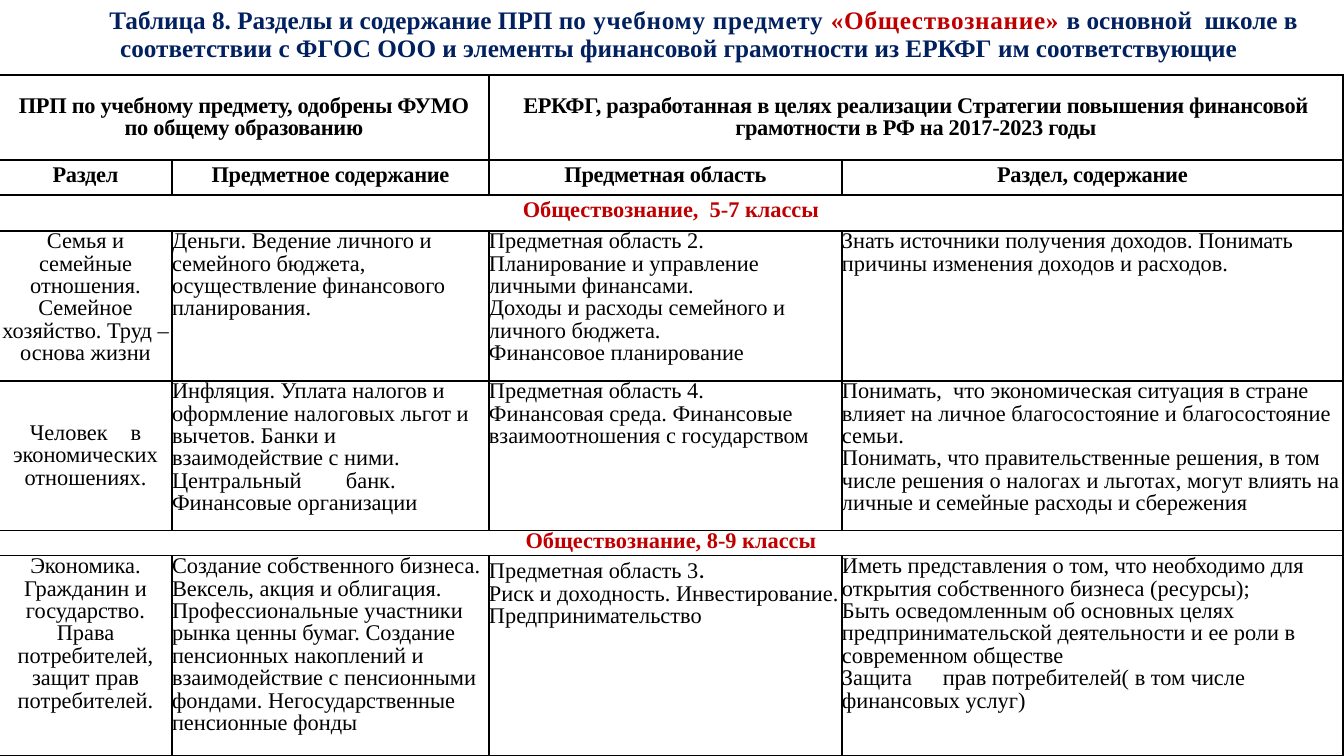
import lxml.etree
import pptx
import pptx.dml.color
import pptx.enum.text
import pptx.oxml.ns
import pptx.util

PX = 9071  # EMU in one px, 100.8 px to the inch
SERIF = "Times New Roman"
BLACK, RED, NAVY = "000000", "C00000", "002060"
CENTER = pptx.enum.text.PP_ALIGN.CENTER
LEFT = pptx.enum.text.PP_ALIGN.LEFT
TOP = pptx.enum.text.MSO_ANCHOR.TOP
MIDDLE = pptx.enum.text.MSO_ANCHOR.MIDDLE

COLUMNS = [173, 317, 353, 501]
ROWS = [85, 35, 36, 150, 150, 25, 200]

TITLE = [  # text, colour, letter spacing in points
    ("Таблица 8. Разделы и содержание ПРП по", NAVY, 0),
    (" учебному предмету ", NAVY, 0.5),
    ("«Обществознание» ", RED, 0.5),
    ("в основной  школе в соответствии с ФГОС ООО и элементы финансовой "
     "грамотности из ЕРКФГ им соответствующие", NAVY, 0),
]
SOURCES = [
    "ПРП по учебному предмету, одобрены ФУМО по общему образованию",
    "ЕРКФГ, разработанная в целях реализации Стратегии повышения финансовой "
    "грамотности в РФ на 2017-2023 годы",
]
HEADINGS = ["Раздел", "Предметное содержание", "Предметная область", "Раздел, содержание"]
GRADES = {2: "Обществознание,  5-7 классы", 5: "Обществознание, 8-9 классы"}
TOPICS = {
    3: [
        "Семья и семейные отношения. Семейное хозяйство. Труд – основа жизни",
        "Деньги. Ведение личного и семейного бюджета, осуществление финансового "
        "планирования.",
        "Предметная область 2. Планирование и управление личными финансами.\n"
        "Доходы и расходы семейного и личного бюджета.\n"
        "Финансовое планирование",
        "Знать источники получения доходов. Понимать причины изменения доходов и расходов.",
    ],
    4: [
        "Человек\tв экономических отношениях.",
        "Инфляция. Уплата налогов и оформление налоговых льгот и вычетов. Банки и "
        "взаимодействие с ними.\n"
        "Центральный\tбанк.\n"
        "Финансовые организации",
        "Предметная область 4.\n"
        "Финансовая среда. Финансовые взаимоотношения с государством",
        "Понимать,  что экономическая ситуация в стране влияет на личное "
        "благосостояние и благосостояние семьи.\n"
        "Понимать, что правительственные решения, в том числе решения о налогах и "
        "льготах, могут влиять на личные и семейные расходы и сбережения",
    ],
    6: [
        "Экономика. Гражданин и государство.\n"
        "Права потребителей, защит прав потребителей.",
        "Создание собственного бизнеса. Вексель, акция и облигация. Профессиональные "
        "участники рынка ценны бумаг. Создание пенсионных накоплений и взаимодействие "
        "с пенсионными фондами. Негосударственные пенсионные фонды",
        "Предметная область 3\n"
        "Риск и доходность. Инвестирование. Предпринимательство",
        "Иметь представления о том, что необходимо для открытия собственного бизнеса "
        "(ресурсы);\n"
        "Быть осведомленным об основных целях предпринимательской деятельности и ее "
        "роли в современном обществе\n"
        "Защита\tправ потребителей( в том числе финансовых услуг)",
    ],
}


def px(length):
    return pptx.util.Emu(length * PX)


def rgb(color):
    return pptx.dml.color.RGBColor.from_string(color)


def add_xml(parent, tag, **attributes):
    return lxml.etree.SubElement(parent, pptx.oxml.ns.qn(tag), attributes)


def style_run(run, color=BLACK, bold=False, size=16, font=SERIF, spacing=0):
    run.font.name = font
    run.font.size = pptx.util.Pt(size)
    run.font.bold = bold
    run.font.color.rgb = rgb(color)
    run._r.get_or_add_rPr().set("spc", str(round(spacing * 100)))


def draw_borders(cell):
    properties = cell._tc.get_or_add_tcPr()
    for position, side in enumerate(("a:lnL", "a:lnR", "a:lnT", "a:lnB")):
        border = add_xml(properties, side, w="12700")
        fill = add_xml(border, "a:solidFill")
        add_xml(fill, "a:srgbClr", val=BLACK)
        properties.insert(position, border)


def fill_cell(cell, text, align=CENTER, anchor=TOP, flush=True, **style):
    cell.vertical_anchor = anchor
    if flush:
        cell.margin_left = cell.margin_right = cell.margin_top = cell.margin_bottom = 0
    cell.text_frame.text = text
    for paragraph in cell.text_frame.paragraphs:
        paragraph.alignment = align
        paragraph.line_spacing = 0.9
        for run in paragraph.runs:
            style_run(run, **style)


def set_title(slide, left, top, width, height):
    title = slide.shapes.title
    title.left, title.top, title.width, title.height = map(px, (left, top, width, height))
    frame = title.text_frame
    frame.word_wrap = True
    frame.auto_size = pptx.enum.text.MSO_AUTO_SIZE.NONE
    frame.vertical_anchor = TOP
    paragraph = frame.paragraphs[0]
    paragraph.alignment = CENTER
    paragraph.line_spacing = 0.9
    indents = paragraph._p.get_or_add_pPr()
    indents.set("marL", str(px(7)))
    indents.set("indent", str(px(49)))
    for text, color, spacing in TITLE:
        run = paragraph.add_run()
        run.text = text
        style_run(run, color, True, 18, spacing=spacing)


def add_curriculum(slide, left, top):
    frame = slide.shapes.add_table(len(ROWS), len(COLUMNS), px(left), px(top),
                                   px(sum(COLUMNS)), px(sum(ROWS)))
    curriculum = frame.table
    curriculum.first_row = curriculum.horz_banding = False
    for column, width in zip(curriculum.columns, COLUMNS):
        column.width = px(width)
    for row, height in zip(curriculum.rows, ROWS):
        row.height = px(height)
    for cell in curriculum.iter_cells():
        cell.fill.background()
        draw_borders(cell)

    # Headings
    for index, source in enumerate(SOURCES):
        cell = curriculum.cell(0, 2 * index)
        cell.merge(curriculum.cell(0, 2 * index + 1))
        fill_cell(cell, source, anchor=MIDDLE, flush=False, bold=True, spacing=-0.2)
    for index, heading in enumerate(HEADINGS):
        fill_cell(curriculum.cell(1, index), heading, flush=False, bold=True, spacing=-0.2)

    # Grade bands
    for row, grades in GRADES.items():
        cell = curriculum.cell(row, 0)
        cell.merge(curriculum.cell(row, len(COLUMNS) - 1))
        fill_cell(cell, grades, flush=row == 5, color=RED, bold=True)

    # Topics
    for row, texts in TOPICS.items():
        for index, text in enumerate(texts):
            fill_cell(curriculum.cell(row, index), text,
                      align=LEFT if index else CENTER,
                      anchor=MIDDLE if (row, index) == (4, 0) else TOP)

    # Wide gap in the bank line, larger full stop after the third area
    bank = curriculum.cell(4, 1).text_frame.paragraphs[1]
    tabs = add_xml(bank._p.get_or_add_pPr(), "a:tabLst")
    add_xml(tabs, "a:tab", pos=str(px(174)), algn="l")
    full_stop = curriculum.cell(6, 2).text_frame.paragraphs[0].add_run()
    full_stop.text = "."
    style_run(full_stop, size=18, font="Calibri")


def main():
    presentation = pptx.Presentation()
    presentation.slide_width = px(1344)
    presentation.slide_height = px(756)
    slide = presentation.slides.add_slide(presentation.slide_layouts[5])
    set_title(slide, 6, 3, 1339, 66)
    add_curriculum(slide, -1, 75)
    presentation.save("out.pptx")


if __name__ == "__main__":
    main()
